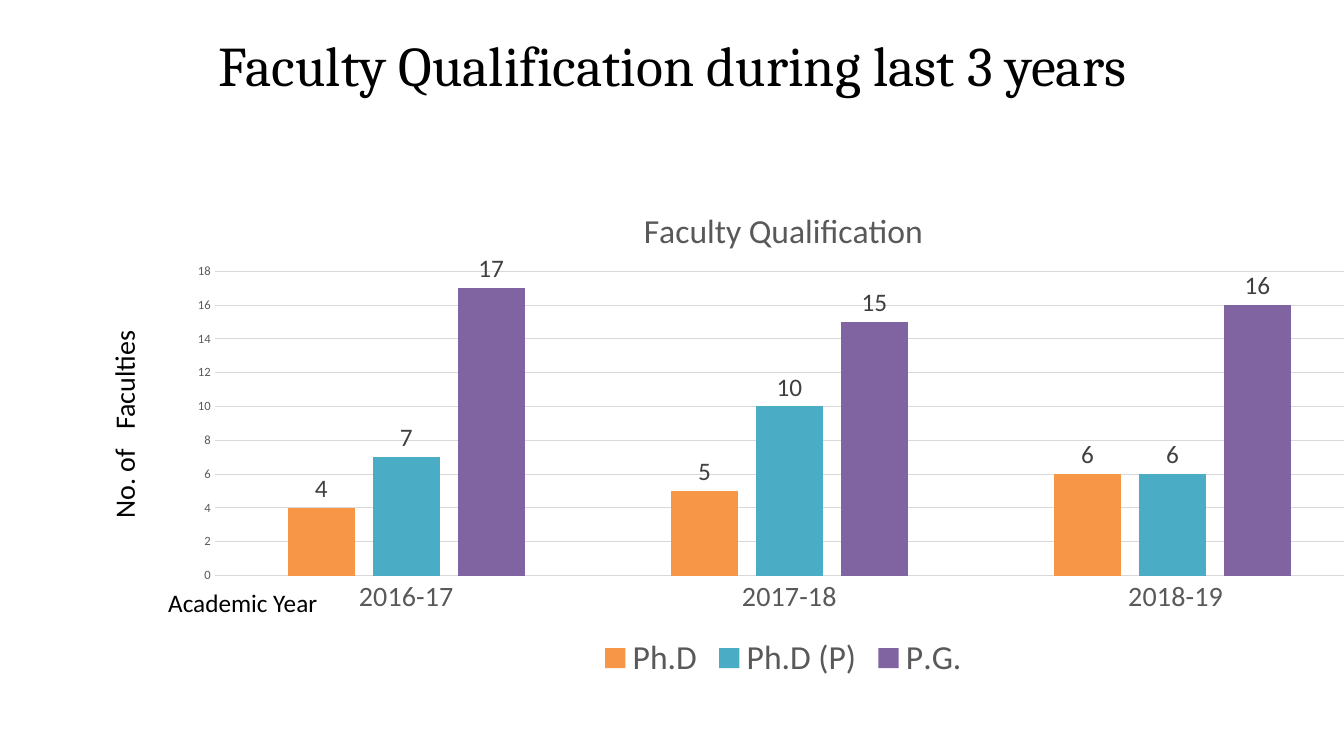
from lxml import etree
from pptx import Presentation
from pptx.chart.data import CategoryChartData
from pptx.dml.color import RGBColor
from pptx.enum.chart import XL_CHART_TYPE, XL_LABEL_POSITION, XL_LEGEND_POSITION, XL_TICK_MARK
from pptx.enum.text import MSO_ANCHOR, PP_ALIGN
from pptx.oxml.ns import qn
from pptx.util import Inches, Pt

CLUSTERED = XL_CHART_TYPE.COLUMN_CLUSTERED
OUTSIDE_END = XL_LABEL_POSITION.OUTSIDE_END
BOTTOM = XL_LEGEND_POSITION.BOTTOM
NO_TICK = XL_TICK_MARK.NONE
TOP = MSO_ANCHOR.TOP
LEFT, CENTER = PP_ALIGN.LEFT, PP_ALIGN.CENTER

BLACK, GRAY, DARK_GRAY, GRID = "000000", "595959", "404040", "D9D9D9"
YEARS = ["2016-17", "2017-18", " 2018-19"]
QUALIFICATIONS = [
    ("Ph.D", (4, 5, 6), "F79646"),
    ("Ph.D (P)", (7, 10, 6), "4BACC6"),
    ("P.G.", (17, 15, 16), "8064A2"),
]


def color(value):
    return RGBColor.from_string(value)


def style_font(font, size, value, name="Calibri"):
    font.size = Pt(size)
    font.name = name
    font.bold = False
    font.color.rgb = color(value)


def style_line(line, value):
    line.color.rgb = color(value)
    line.width = Pt(0.75)


def add_text(slide, box, text, size, name="Calibri", align=LEFT):
    shape = slide.shapes.add_textbox(*map(Inches, box))
    frame = shape.text_frame
    frame.word_wrap = True
    frame.vertical_anchor = TOP
    paragraph = frame.paragraphs[0]
    paragraph.alignment = align
    run = paragraph.add_run()
    run.text = text
    style_font(run.font, size, BLACK, name)
    return shape


def add_heading(slide, box):
    shape = add_text(slide, box, "Faculty Qualification during last 3 years", 40, "Cambria", CENTER)
    shape.text_frame.margin_top = 0


def set_plot_area(chart, left, top, width, height):
    """Place the inner plot area, in fractions of the chart."""
    plot_area = chart.plots[0]._element.getparent()
    for old_layout in plot_area.findall(qn("c:layout")):
        plot_area.remove(old_layout)
    layout = etree.Element(qn("c:layout"))
    manual = etree.SubElement(layout, qn("c:manualLayout"))
    settings = [("layoutTarget", "inner"), ("xMode", "edge"), ("yMode", "edge"),
                ("x", left), ("y", top), ("w", width), ("h", height)]
    for tag, value in settings:
        etree.SubElement(manual, qn(f"c:{tag}")).set("val", str(value))
    plot_area.insert(0, layout)


def style_axes(chart):
    years = chart.category_axis
    years.major_tick_mark = years.minor_tick_mark = NO_TICK
    style_font(years.tick_labels.font, 20, GRAY)
    style_line(years.format.line, GRID)

    counts = chart.value_axis
    counts.major_tick_mark = counts.minor_tick_mark = NO_TICK
    counts.minimum_scale, counts.maximum_scale, counts.major_unit = 0, 18, 2
    style_font(counts.tick_labels.font, 9, GRAY)
    counts.format.line.fill.background()
    counts.has_major_gridlines = True
    style_line(counts.major_gridlines.format.line, GRID)


def style_columns(plot):
    plot.gap_width, plot.overlap = 219, -27
    plot.vary_by_categories = False
    for series, (_, _, fill) in zip(plot.series, QUALIFICATIONS):
        series.format.fill.solid()
        series.format.fill.fore_color.rgb = color(fill)
        labels = series.data_labels
        labels.show_value = True
        labels.position = OUTSIDE_END
        style_font(labels.font, 18, DARK_GRAY)


def add_qualification_chart(slide, box):
    data = CategoryChartData()
    data.categories = YEARS
    for name, values, _ in QUALIFICATIONS:
        data.add_series(name, values)
    chart = slide.shapes.add_chart(CLUSTERED, *map(Inches, box), data).chart
    style_font(chart.font, 10, BLACK)

    # Title and legend
    chart.has_title = True
    run = chart.chart_title.text_frame.paragraphs[0].add_run()
    run.text = "Faculty Qualification"
    style_font(run.font, 24, GRAY)
    chart.chart_title.include_in_layout = False
    chart.has_legend = True
    chart.legend.position = BOTTOM
    chart.legend.include_in_layout = False
    style_font(chart.legend.font, 24, GRAY)

    style_axes(chart)
    style_columns(chart.plots[0])
    set_plot_area(chart, 0.03, 0.17, 0.95, 0.61)

    # Axis captions beside the chart
    left, top, _, _ = box
    caption = add_text(slide, (left - 1.79, top + 1.92, 2.5, 0.44), "No. of   Faculties", 20)
    caption.rotation = 270
    add_text(slide, (left - 0.2, top + 3.93, 2.17, 0.4), "Academic Year", 18)


def main():
    presentation = Presentation()
    presentation.slide_width = Inches(13.33)
    presentation.slide_height = Inches(7.5)
    slide = presentation.slides.add_slide(presentation.slide_layouts[6])
    add_heading(slide, (0.67, 0.3, 12, 1.25))
    add_qualification_chart(slide, (1.77, 1.85, 12, 4.95))
    presentation.save("out.pptx")


if __name__ == "__main__":
    main()
